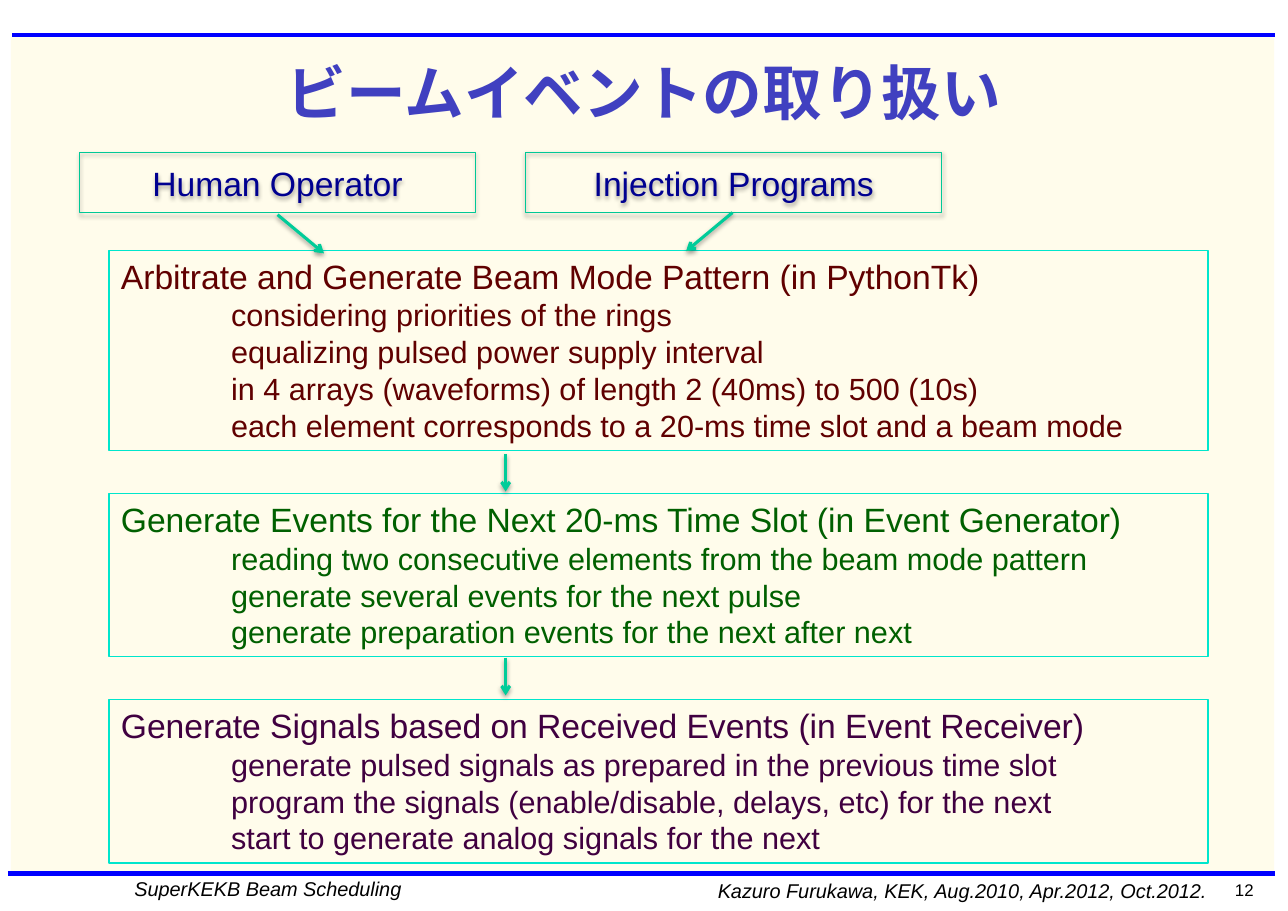
import pptx
import pptx.dml.color
import pptx.enum.shapes
import pptx.enum.text
import pptx.oxml
import pptx.oxml.ns
import pptx.util

Cm, Pt = pptx.util.Cm, pptx.util.Pt
Align = pptx.enum.text.PP_ALIGN
Anchor = pptx.enum.text.MSO_ANCHOR
RECT = pptx.enum.shapes.MSO_SHAPE.RECTANGLE
STRAIGHT = pptx.enum.shapes.MSO_CONNECTOR.STRAIGHT
NS = pptx.oxml.ns.nsdecls("a")
SHADOW = (f'<a:outerShdw {NS} blurRad="39400" dist="22000" dir="5400000" rotWithShape="0">'
          '<a:srgbClr val="000000"><a:alpha val="36000"/></a:srgbClr></a:outerShdw>')


def color(hex_string):
    return pptx.dml.color.RGBColor.from_string(hex_string)


def write(box, lines, ink, align=Align.LEFT, anchor=Anchor.TOP, bold=False, italic=False):
    """Fill a box with (text, size, indent in cm) lines."""
    frame = box.text_frame
    frame.word_wrap = True
    frame.vertical_anchor = anchor
    frame.margin_left = frame.margin_right = Cm(0.28)
    frame.margin_top = frame.margin_bottom = Cm(0.13)
    for number, (text, size, indent) in enumerate(lines):
        para = frame.add_paragraph() if number else frame.paragraphs[0]
        para.alignment = align
        if indent:
            para._p.get_or_add_pPr().set("marL", str(Cm(indent)))
        span = para.add_run()
        span.text = text
        span.font.name = "Arial"
        span.font.size = Pt(size)
        span.font.bold = bold
        span.font.italic = italic
        span.font.color.rgb = color(ink)


deck = pptx.Presentation()
deck.slide_width, deck.slide_height = Cm(29.7), Cm(21)
page = deck.slides.add_slide(deck.slide_layouts[6])

# Cream backdrop
backdrop = page.shapes.add_shape(RECT, Cm(0.25), Cm(0.86), Cm(29.13), Cm(19.23))
backdrop.shadow.inherit = False
backdrop.fill.solid()
backdrop.fill.fore_color.rgb = color("FFFCEB")
backdrop.line.fill.background()

# Title, footers and page number
captions = [
    (0.46, 1.12, 28.78, 1.98, "ビームイベントの取り扱い", 39, "4040C0", Align.CENTER, Anchor.MIDDLE, True, False),
    (15.75, 20.12, 12.34, 0.84, "Kazuro Furukawa, KEK, Aug.2010, Apr.2012, Oct.2012.", 13, "000000",
     Align.RIGHT, Anchor.TOP, False, True),
    (2.82, 20.07, 11.2, 0.84, "SuperKEKB Beam Scheduling", 13, "000000", Align.LEFT, Anchor.TOP, False, True),
    (27.46, 20.14, 1.73, 0.71, "12", 11, "000000", Align.RIGHT, Anchor.TOP, False, False),
]
for left, top, width, height, text, size, ink, align, anchor, bold, italic in captions:
    box = page.shapes.add_textbox(Cm(left), Cm(top), Cm(width), Cm(height))
    write(box, [(text, size, 0)], ink, align, anchor, bold, italic)

# Sources of requests
for left, width, text in [(1.83, 9.14, "Human Operator"), (12.12, 9.6, "Injection Programs")]:
    box = page.shapes.add_shape(RECT, Cm(left), Cm(3.51), Cm(width), Cm(1.4))
    box.fill.background()
    box.line.color.rgb = color("00C896")
    box.line.width = Pt(0.75)
    box.shadow.inherit = False
    effects = box._element.spPr.find(pptx.oxml.ns.qn("a:effectLst"))
    effects.append(pptx.oxml.parse_xml(SHADOW))
    write(box, [(text, 22, 0)], "000090", Align.CENTER, Anchor.MIDDLE)

# Processing stages
stages = [
    (5.77, 4.62, "600000", "Arbitrate and Generate Beam Mode Pattern (in PythonTk)", [
        "considering priorities of the rings",
        "equalizing pulsed power supply interval",
        "in 4 arrays (waveforms) of length 2 (40ms) to 500 (10s)",
        "each element corresponds to a 20-ms time slot and a beam mode"]),
    (11.38, 3.76, "006000", "Generate Events for the Next 20-ms Time Slot (in Event Generator)", [
        "reading two consecutive elements from the beam mode pattern",
        "generate several events for the next pulse",
        "generate preparation events for the next after next"]),
    (16.13, 3.76, "400040", "Generate Signals based on Received Events (in Event Receiver)", [
        "generate pulsed signals as prepared in the previous time slot",
        "program the signals (enable/disable, delays, etc) for the next",
        "start to generate analog signals for the next"]),
]
for top, height, ink, heading, details in stages:
    box = page.shapes.add_shape(RECT, Cm(2.51), Cm(top), Cm(25.35), Cm(height))
    box.shadow.inherit = False
    box.fill.background()
    box.line.color.rgb = color("00E6CC")
    box.line.width = Pt(1)
    write(box, [(heading, 22, 0)] + [(detail, 20, 2.54) for detail in details], ink)

# Page rules, then flow arrows
connectors = [
    (0.28, 0.81, 29.41, 0.81, False),
    (0.18, 20.14, 29.39, 20.14, False),
    (6.4, 4.95, 7.47, 5.84, True),
    (16.89, 4.9, 15.82, 5.79, True),
    (11.66, 10.46, 11.66, 11.33, True),
    (11.66, 15.16, 11.66, 16.03, True),
]
for x1, y1, x2, y2, is_arrow in connectors:
    link = page.shapes.add_connector(STRAIGHT, Cm(x1), Cm(y1), Cm(x2), Cm(y2))
    link.line.color.rgb = color("00CC99" if is_arrow else "0000FF")
    link.line.width = Pt(2 if is_arrow else 3)
    effects = pptx.oxml.parse_xml(f"<a:effectLst {NS}/>")
    if is_arrow:
        link.line._get_or_add_ln().append(pptx.oxml.parse_xml(f'<a:tailEnd {NS} type="arrow"/>'))
        effects.append(pptx.oxml.parse_xml(SHADOW))
    link._element.spPr.append(effects)

deck.save("out.pptx")
